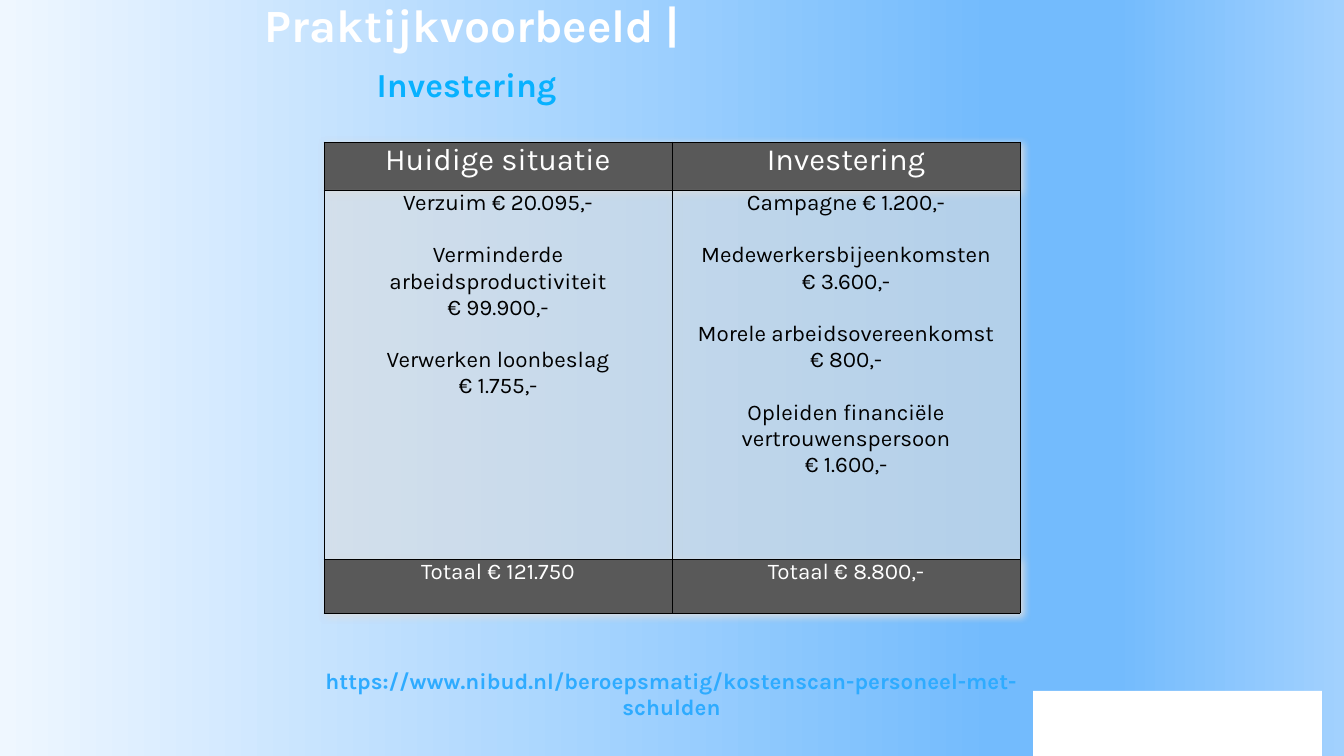
from lxml import etree
from pptx import Presentation, util as u
from pptx.dml.color import RGBColor
from pptx.enum import shapes, text
from pptx.oxml.ns import qn

EMU_PER_PX = 914400 / 50.4
FONT = "Karla"
WHITE = RGBColor(0xFF, 0xFF, 0xFF)
BLACK = RGBColor(0x00, 0x00, 0x00)
DARK_GREY = RGBColor(0x59, 0x59, 0x59)
LIGHT_GREY = RGBColor(0xDC, 0xDE, 0xE0)
ACCENT = RGBColor(0x08, 0xB1, 0xFF)
LINK_BLUE = RGBColor(0x2E, 0xAB, 0xFF)
BACKGROUND = [(0, "EFF7FF"), (74, "73BBFD"), (83, "73BBFD"), (100, "A2D1FE")]

COLUMN_WIDTH = 348
ROW_HEIGHTS = [48, 369, 54]
HEADERS = ["Huidige situatie", "Investering"]
TOTALS = ["Totaal € 121.750", "Totaal € 8.800,-"]
# Each cost item is a group of lines; groups are one line apart.
COSTS = [
    [["Verzuim € 20.095,-"],
     ["Verminderde arbeidsproductiviteit", "€ 99.900,-"],
     ["Verwerken loonbeslag", "€ 1.755,-"]],
    [["Campagne € 1.200,-"],
     ["Medewerkersbijeenkomsten", "€ 3.600,-"],
     ["Morele arbeidsovereenkomst", "€ 800,-"],
     ["Opleiden financiële vertrouwenspersoon", "€ 1.600,-"]],
]
ITEM_GAP = u.Pt(37.4)


def px(length):
    return u.Emu(round(length * EMU_PER_PX))


def style(font, size, color, bold=False):
    font.name, font.size, font.bold = FONT, u.Pt(size), bold
    font.color.rgb = color


def add_xml(parent, tag, **attributes):
    names = {name: str(value) for name, value in attributes.items()}
    return etree.SubElement(parent, qn(tag), names)


def paint_background(slide):
    fill = slide.background.fill
    fill.gradient()
    fill.gradient_angle = 0
    stops = next(slide._element.iter(qn("a:gsLst")))
    for stop in list(stops):
        stops.remove(stop)
    for percent, color in BACKGROUND:
        stop = add_xml(stops, "a:gs", pos=percent * 1000)
        add_xml(stop, "a:srgbClr", val=color)


def set_up_frame(frame):
    frame.word_wrap = True
    frame.auto_size = text.MSO_AUTO_SIZE.NONE
    frame.vertical_anchor = text.MSO_ANCHOR.MIDDLE
    frame.margin_left = frame.margin_right = px(3)
    frame.margin_top = frame.margin_bottom = px(3)
    frame.paragraphs[0].alignment = text.PP_ALIGN.CENTER
    return frame.paragraphs[0]


def fill_title(title):
    title.left, title.top, title.width, title.height = map(px, (176, 21, 593, 61))
    heading = set_up_frame(title.text_frame)
    for words, size, color in [("Praktijkvoorbeeld | ", 66, WHITE),
                               ("Investering", 48, ACCENT), (" ", 66, WHITE)]:
        run = heading.add_run()
        run.text = words
        style(run.font, size, color, bold=True)


def add_link(slide):
    box = slide.shapes.add_textbox(*map(px, (299, 677, 745, 33)))
    link = set_up_frame(box.text_frame)
    link.text = "https://www.nibud.nl/beroepsmatig/kostenscan-personeel-met-schulden"
    style(link.font, 32, LINK_BLUE, bold=True)


def add_corner_panel(slide):
    panel = slide.shapes.add_shape(
        shapes.MSO_SHAPE.RECTANGLE, *map(px, (1033, 691, 289, 65)))
    panel.shadow.inherit = False
    panel.fill.solid()
    panel.fill.fore_color.rgb = WHITE
    panel.line.fill.background()


def format_cell(cell, fill, alpha=100):
    """Set margins, black borders and fill; alpha is the opacity in percent."""
    cell.margin_left = cell.margin_right = px(4)
    cell.margin_top = cell.margin_bottom = 0
    properties = cell._tc.get_or_add_tcPr()
    for side in ("a:lnL", "a:lnR", "a:lnT", "a:lnB"):
        line = add_xml(properties, side, w=u.Pt(1))
        add_xml(add_xml(line, "a:solidFill"), "a:srgbClr", val=BLACK)
    cell.fill.solid()
    cell.fill.fore_color.rgb = fill
    if alpha < 100:
        color = properties.find(qn("a:solidFill")).find(qn("a:srgbClr"))
        add_xml(color, "a:alpha", val=alpha * 1000)


def write_cell(cell, groups, size, color):
    frame = cell.text_frame
    lines = [(line, number > 0 and position == 0)
             for number, group in enumerate(groups)
             for position, line in enumerate(group)]
    for index, (line, starts_item) in enumerate(lines):
        paragraph = frame.add_paragraph() if index else frame.paragraphs[0]
        paragraph.text = line
        paragraph.alignment = text.PP_ALIGN.CENTER
        if starts_item:
            paragraph.space_before = ITEM_GAP
        style(paragraph.font, size, color)


def add_table_shadow(table):
    effects = etree.Element(qn("a:effectLst"))
    shadow = add_xml(effects, "a:outerShdw", blurRad=px(8), dist=px(3), dir=2700000)
    add_xml(shadow, "a:srgbClr", val=LIGHT_GREY)
    table._tbl.tblPr.insert(0, effects)


def add_cost_table(slide):
    columns = len(HEADERS)
    table = slide.shapes.add_table(
        len(ROW_HEIGHTS), columns, px(324), px(142),
        px(columns * COLUMN_WIDTH), px(sum(ROW_HEIGHTS))).table
    add_table_shadow(table)
    for row, height in zip(table.rows, ROW_HEIGHTS):
        row.height = px(height)
    for column, (header, costs, total) in enumerate(zip(HEADERS, COSTS, TOTALS)):
        table.columns[column].width = px(COLUMN_WIDTH)
        rows = [([[header]], 44, WHITE, DARK_GREY, 100),
                (costs, 32, BLACK, LIGHT_GREY, 38),
                ([[total]], 32, WHITE, DARK_GREY, 100)]
        for row, (groups, size, color, fill, alpha) in enumerate(rows):
            cell = table.cell(row, column)
            format_cell(cell, fill, alpha)
            write_cell(cell, groups, size, color)


def main():
    deck = Presentation()
    deck.slide_width, deck.slide_height = px(1344), px(756)
    slide = deck.slides.add_slide(deck.slide_layouts.get_by_name("Title Only"))
    paint_background(slide)
    add_corner_panel(slide)
    fill_title(slide.shapes.title)
    add_cost_table(slide)
    add_link(slide)
    deck.save("out.pptx")


if __name__ == "__main__":
    main()
